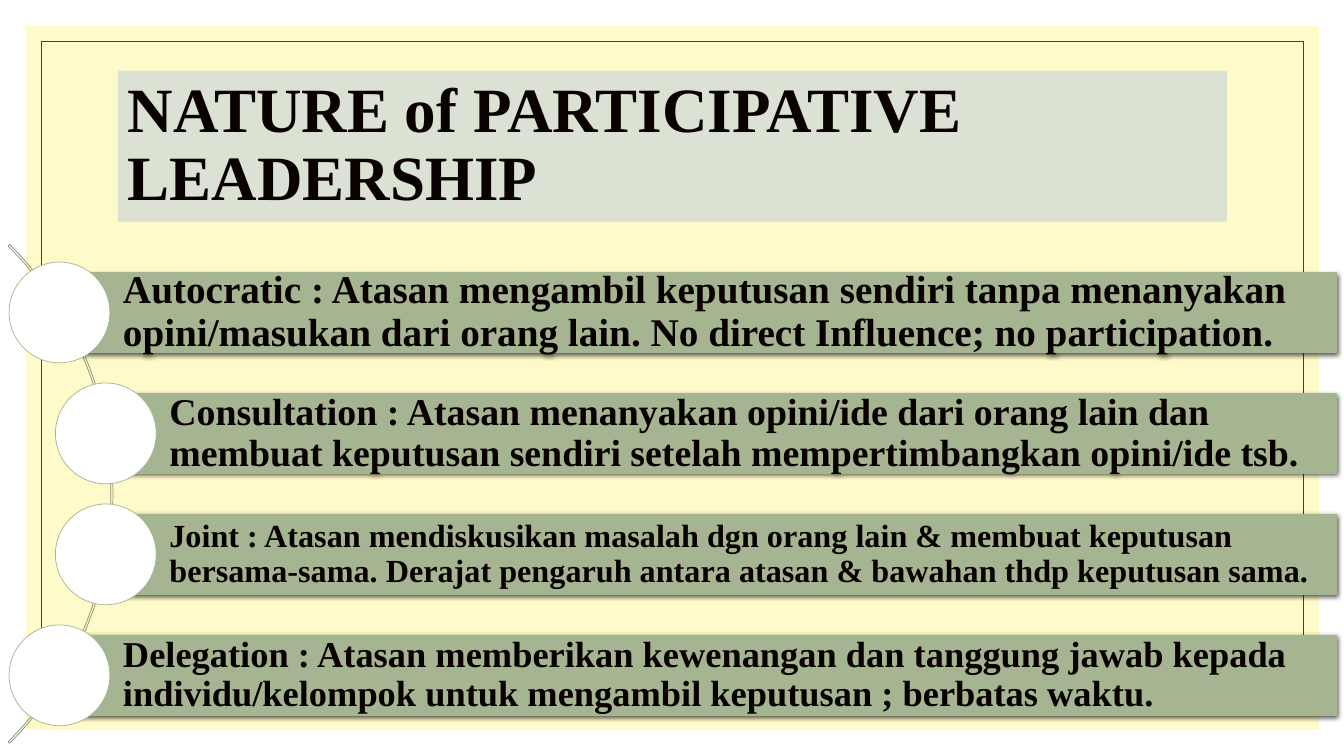
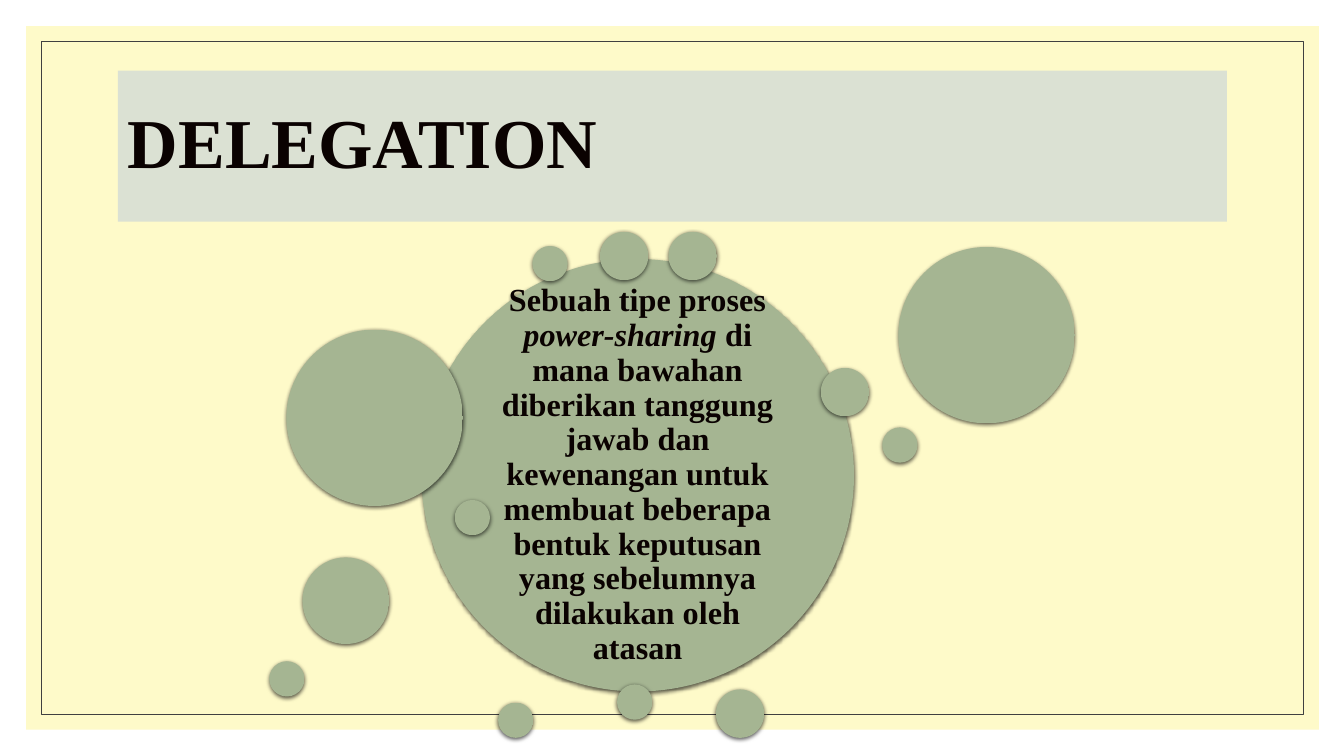
from lxml.etree import SubElement
from pptx import Presentation
from pptx.dml.color import RGBColor
from pptx.enum.shapes import MSO_SHAPE as Shape
from pptx.enum.text import MSO_ANCHOR as Anchor, PP_ALIGN as Align
from pptx.oxml.ns import qn
from pptx.util import Pt

PX = 9144
FONT = "Times New Roman"
WHITE = RGBColor(0xFF, 0xFF, 0xFF)
CREAM = RGBColor(0xFE, 0xFA, 0xC9)
GRAY = RGBColor(0x40, 0x40, 0x40)
MIST = RGBColor(0xDB, 0xE1, 0xD3)
INK = RGBColor(0x0A, 0x02, 0x01)
SAGE = RGBColor(0xA5, 0xB5, 0x92)
MOSS = RGBColor(0xA4, 0xB4, 0x90)
OLIVE = RGBColor(0x84, 0x91, 0x75)

STYLES = (
    (0, 28, 8, "Autocratic : Atasan mengambil keputusan sendiri tanpa menanyakan "
     "opini/masukan dari orang lain. No direct Influence; no participation."),
    (46, 27, 7, "Consultation : Atasan menanyakan opini/ide dari orang lain dan "
     "membuat keputusan sendiri setelah mempertimbangkan opini/ide tsb."),
    (46, 23, 6, "Joint : Atasan mendiskusikan masalah dgn orang lain & membuat keputusan "
     "bersama-sama. Derajat pengaruh antara atasan & bawahan thdp keputusan sama."),
    (0, 26, 7, "Delegation : Atasan memberikan kewenangan dan tanggung jawab kepada "
     "individu/kelompok untuk mengambil keputusan ; berbatas waktu."),
)
POWER = (
    "Sebuah tipe proses", " power-sharing ",
    "di mana bawahan diberikan tanggung jawab dan kewenangan untuk membuat "
    "beberapa bentuk keputusan yang sebelumnya dilakukan oleh atasan",
)
DOTS = (
    (663, 230, 48), (494, 697, 35), (875, 424, 35), (710, 684, 48),
    (528, 244, 35), (451, 496, 35), (284, 327, 175), (595, 230, 48),
    (300, 553, 86), (891, 245, 175), (814, 365, 48), (267, 656, 35),
    (612, 679, 35),
)


class Deck:
    """Hold the deck style and the current slide."""

    def __init__(self):
        self.file = Presentation()
        self.file.slide_width = 1333 * PX
        self.file.slide_height = 750 * PX
        self.slide = None

    def page(self, title, size):
        self.slide = self.file.slides.add_slide(self.file.slide_layouts[6])
        self.shape(Shape.RECTANGLE, (26, 26, 1282, 698), CREAM)
        self.shape(Shape.RECTANGLE, (41, 41, 1252, 668), line=GRAY)
        head = self.shape(Shape.RECTANGLE, (117, 70, 1100, 150), MIST)
        self.text(head, (title,), size, (10, 5, 10, 5))

    def shape(self, kind, box, fill=None, line=None):
        item = self.slide.shapes.add_shape(kind, *(n * PX for n in box))
        item.shadow.inherit = False
        if fill is None:
            item.fill.background()
        else:
            item.fill.solid()
            item.fill.fore_color.rgb = fill
        if line is None:
            item.line.fill.background()
        else:
            item.line.color.rgb = line
            item.line.width = Pt(0.5)
        return item

    def raised(self, kind, box):
        item = self.shape(kind, box)
        item.fill.gradient()
        item.fill.gradient_angle = 270
        for stop, color in zip(item.fill.gradient_stops, (SAGE, MOSS)):
            stop.color.rgb = color
        glow = item.element.spPr.find(qn("a:effectLst"))
        shade = SubElement(glow, qn("a:outerShdw"), blurRad=str(Pt(3)),
                           dist=str(Pt(1)), dir="5400000", rotWithShape="0")
        tint = SubElement(shade, qn("a:srgbClr"), val="000000")
        SubElement(tint, qn("a:alpha"), val="63000")
        return item

    def text(self, item, parts, size, pad, align=Align.LEFT):
        frame = item.text_frame
        frame.word_wrap = True
        frame.vertical_anchor = Anchor.MIDDLE
        (frame.margin_left, frame.margin_top,
         frame.margin_right, frame.margin_bottom) = (n * PX for n in pad)
        para = frame.paragraphs[0]
        para.text = parts[0]
        for part in parts[1:]:
            para.add_run().text = part
        para.alignment = align
        para.line_spacing = 0.9
        for index, run in enumerate(para.runs):
            run.font.name = FONT
            run.font.size = Pt(size)
            run.font.bold = True
            run.font.italic = index % 2 == 1
            run.font.color.rgb = INK

    def arc(self, box):
        item = self.shape(Shape.BLOCK_ARC, box, line=OLIVE)
        for index, value in enumerate((189, 27, 0.003)):
            item.adjustments[index] = value

    def bar(self, top, shift, size, pad, text):
        left = 59 + shift
        item = self.raised(Shape.RECTANGLE, (left, top, 1326 - left, 80))
        self.text(item, (text,), size, (63, pad, pad, pad))
        self.shape(Shape.OVAL, (left - 50, top - 10, 100, 100), WHITE, SAGE)

    def dot(self, left, top, size):
        return self.raised(Shape.OVAL, (left, top, size, size))


def main():
    deck = Deck()
    deck.page("NATURE of PARTICIPATIVE LEADERSHIP", 45)
    deck.arc((-588, 140, 700, 700))
    for row, style in enumerate(STYLES):
        deck.bar(270 + 120 * row, *style)

    deck.page("DELEGATION", 50)
    core = deck.dot(418, 257, 429)
    deck.text(core, POWER, 23, (10, 10, 10, 10), Align.CENTER)
    for dot in DOTS:
        deck.dot(*dot)
    deck.file.save("out.pptx")


if __name__ == "__main__":
    main()
